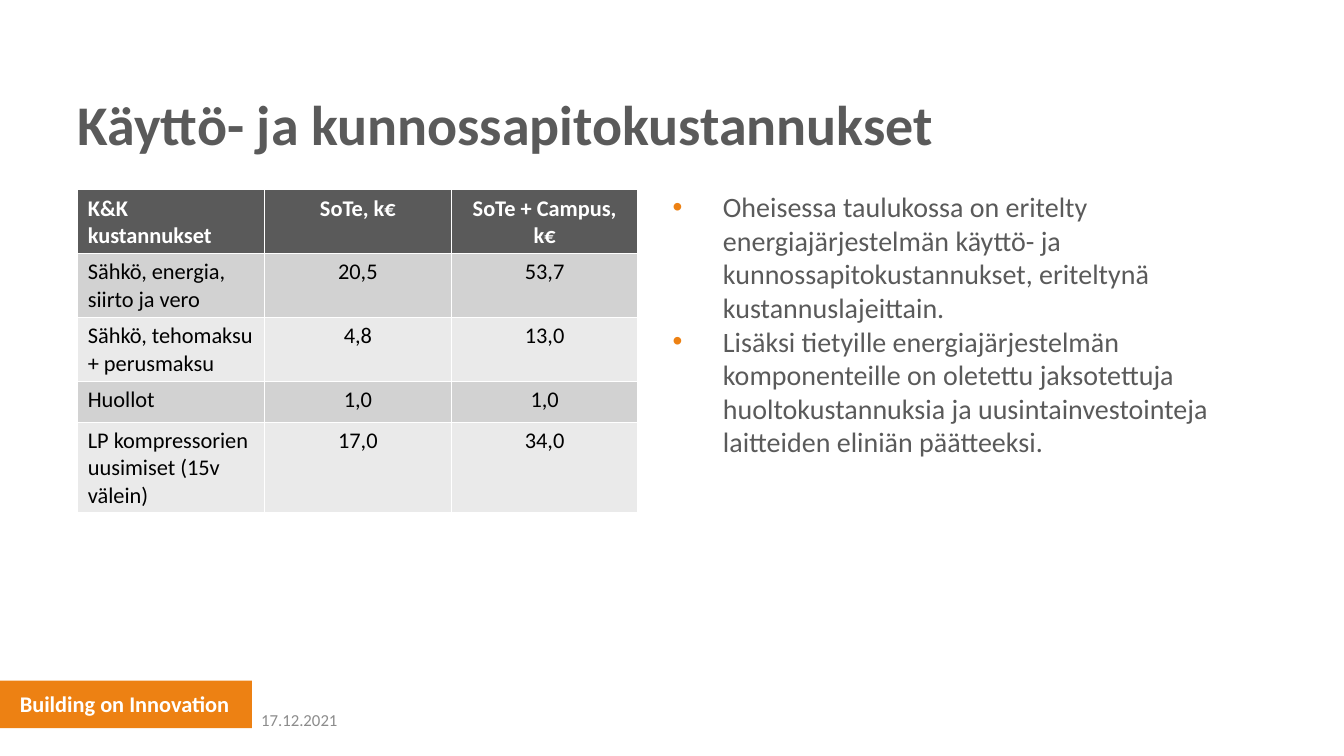
from lxml import etree
from pptx import Presentation
from pptx.dml.color import RGBColor
from pptx.enum.shapes import MSO_SHAPE
from pptx.enum.text import MSO_ANCHOR, PP_ALIGN
from pptx.oxml.ns import qn
from pptx.util import Cm, Pt

RECT = MSO_SHAPE.RECTANGLE
TOP, MIDDLE, BOTTOM = MSO_ANCHOR.TOP, MSO_ANCHOR.MIDDLE, MSO_ANCHOR.BOTTOM
LEFT, CENTER = PP_ALIGN.LEFT, PP_ALIGN.CENTER
FACE = "Calibri"
ORANGE, GREY, PALE = "ED8113", "5A5A5A", "8C8C8C"
WHITE, BLACK = "FFFFFF", "000000"
BANDS = ("D2D2D2", "EAEAEA")
COSTS = [
    ("K&K kustannukset", "SoTe, k€", "SoTe + Campus, k€"),
    ("Sähkö, energia, siirto ja vero", "20,5", "53,7"),
    ("Sähkö, tehomaksu + perusmaksu", "4,8", "13,0"),
    ("Huollot", "1,0", "1,0"),
    ("LP kompressorien uusimiset (15v välein)", "17,0", "34,0"),
]
POINTS = [
    "Oheisessa taulukossa on eritelty energiajärjestelmän käyttö- ja "
    "kunnossapitokustannukset, eriteltynä kustannuslajeittain.",
    "Lisäksi tietyille energiajärjestelmän komponenteille on oletettu "
    "jaksotettuja huoltokustannuksia ja uusintainvestointeja laitteiden "
    "eliniän päätteeksi.",
]


def color(code):
    """Return the colour for a hex string."""
    return RGBColor.from_string(code)


def bullet(para):
    """Give a paragraph a hanging orange bullet."""
    props = para._p.get_or_add_pPr()
    props.set("marL", str(Cm(1.27)))
    props.set("indent", str(-Cm(1.27)))
    tint = etree.SubElement(props, qn("a:buClr"))
    etree.SubElement(tint, qn("a:srgbClr"), val=ORANGE)
    etree.SubElement(props, qn("a:buFont"), typeface="Arial")
    etree.SubElement(props, qn("a:buChar"), char="•")


def write(frame, *lines, size=16, ink=GREY, bold=False, align=LEFT, dots=False):
    """Fill a text frame with one paragraph per line."""
    for index, line in enumerate(lines):
        para = frame.add_paragraph() if index else frame.paragraphs[0]
        if dots:
            bullet(para)
        para.alignment = align
        run = para.add_run()
        run.text = line
        font = run.font
        font.name, font.size, font.bold = FACE, Pt(size), bold
        font.color.rgb = color(ink)


def label(slide, place, *lines, anchor=TOP, inset=0, **style):
    """Add a wrapped text box."""
    frame = slide.shapes.add_textbox(*map(Cm, place)).text_frame
    frame.word_wrap = True
    frame.vertical_anchor = anchor
    frame.margin_left = frame.margin_right = Cm(inset)
    frame.margin_top = frame.margin_bottom = Cm(inset / 2)
    write(frame, *lines, **style)


def block(slide, place, fill):
    """Add a plain filled rectangle."""
    shape = slide.shapes.add_shape(RECT, *map(Cm, place))
    shape.shadow.inherit = False
    shape.fill.solid()
    shape.fill.fore_color.rgb = color(fill)
    shape.line.fill.background()


def grid(slide, place, rows):
    """Add a table with a dark header and banded rows."""
    frame = slide.shapes.add_table(len(rows), len(rows[0]), *map(Cm, place))
    for i, row in enumerate(rows):
        head = i == 0
        for j, text in enumerate(row):
            cell = frame.table.cell(i, j)
            cell.fill.solid()
            cell.fill.fore_color.rgb = color(GREY if head else BANDS[(i - 1) % 2])
            write(cell.text_frame, text, ink=WHITE if head else BLACK,
                  bold=head, align=CENTER if j else LEFT)


def main():
    """Build the cost slide and save it."""
    deck = Presentation()
    deck.slide_width, deck.slide_height = Cm(33.87), Cm(19.05)
    slide = deck.slides.add_slide(deck.slide_layouts[6])
    block(slide, (0, 17.15, 6.35, 1.2), ORANGE)
    label(slide, (0.5, 17.4, 5.75, 0.92), "Building on Innovation",
          ink=WHITE, bold=True)
    label(slide, (6.33, 17.74, 7.62, 0.78), "17.12.2021",
          size=12, ink=PALE, anchor=MIDDLE, inset=0.25)
    label(slide, (1.96, 0.76, 30.2, 3.18), "Käyttö- ja kunnossapitokustannukset",
          size=40, bold=True, anchor=BOTTOM)
    label(slide, (16.95, 4.78, 15.24, 12.13), *POINTS, size=20, dots=True)
    grid(slide, (1.96, 4.78, 14.12, 5.15), COSTS)
    deck.save("out.pptx")


if __name__ == "__main__":
    main()
